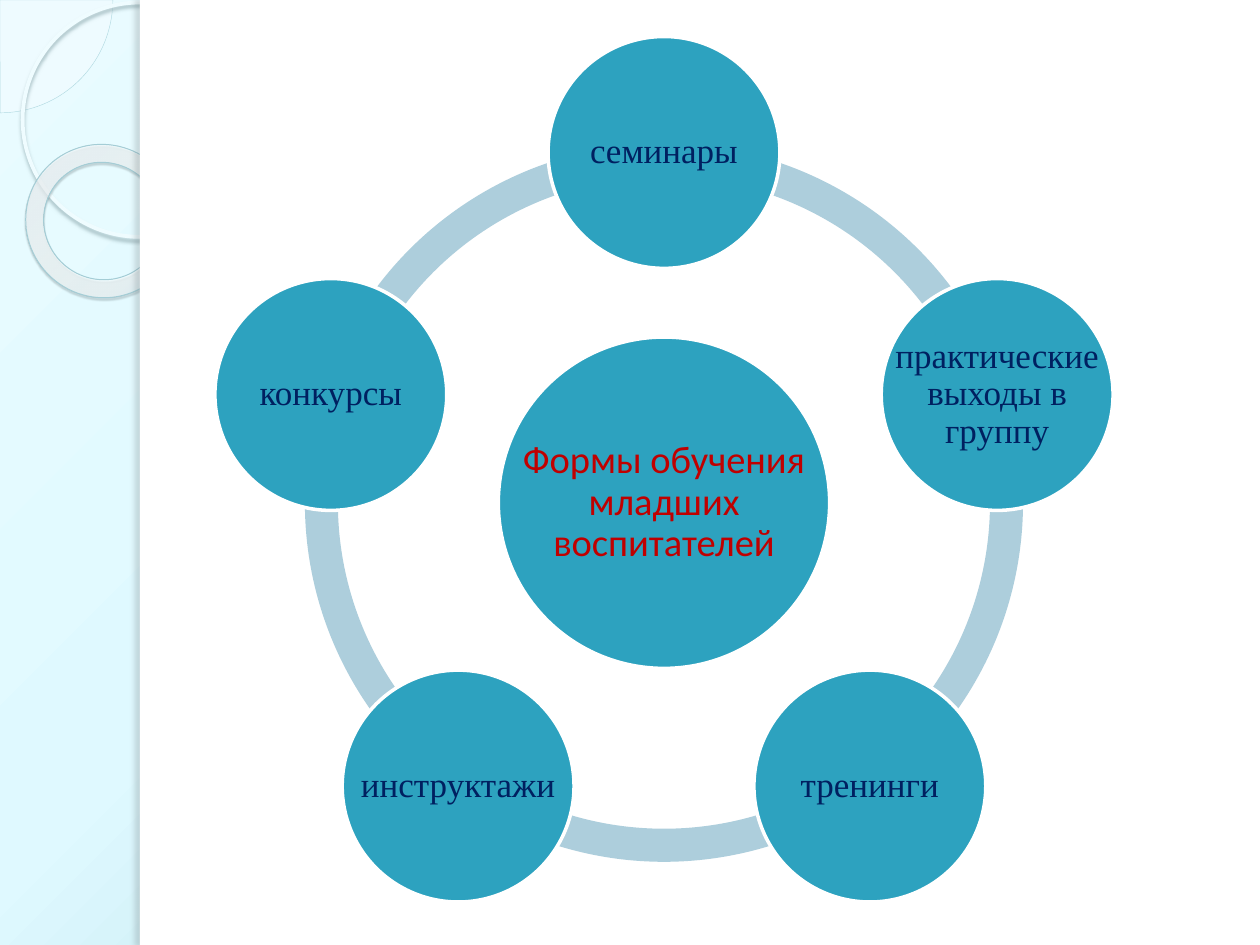
from math import cos, radians, sin

from lxml import etree
from pptx import Presentation
from pptx import util as u
from pptx.dml.color import RGBColor
from pptx.enum import shapes, text
from pptx.oxml import ns

HUES = {
    "white": "FFFFFF", "node": "2DA2BF", "arc": "ADCEDC",
    "title": "C00000", "label": "002060",
    "pie": "F9FEFF", "pie_line": "B2DAE2", "hoop": "EFFCFF",
    "ring_line": "A4CDD6", "hoop_dark": "9FB9BE",
    "ring_dark": "4C5D61", "edge_dark": "6E7A7D",
}
BACK = [(0, "E9FBFF", 100), (40, "DFF9FF", 100), (100, "96CBD6", 100)]
RING = [(0, "F9FEFF", 70), (70, "FDFFFF", 55), (100, "A3EEFE", 60)]
TITLE = {"size": u.Pt(22), "name": "Calibri"}
LABEL = {"size": u.Pt(20), "name": "Times New Roman"}
FRAME = {"word_wrap": True, "vertical_anchor": text.MSO_ANCHOR.MIDDLE,
         **{f"margin_{side}": u.Inches(0.03)
            for side in ("left", "top", "right", "bottom")}}
PARA = {"alignment": text.PP_ALIGN.CENTER, "line_spacing": 0.9}
WORDS = ["семинары", "практические выходы в группу", "тренинги",
         "инструктажи", "конкурсы"]
KIND = shapes.MSO_SHAPE


def rgb(name):
    return RGBColor.from_string(HUES[name])


def assign(item, values):
    for key, value in values.items():
        setattr(item, key, value)


def add(parent, tag, **attrs):
    return etree.SubElement(parent, ns.qn(tag), attrs)


def tint(parent, color, alpha):
    node = add(parent, "a:srgbClr", val=color)
    add(node, "a:alpha", val=str(alpha * 1000))


def radial(host, stops, left, top):
    """Turn the gradient in host into a circular one around (left, top) percent."""
    grad = host.find(".//" + ns.qn("a:gradFill"))
    for child in list(grad):
        grad.remove(child)
    items = add(grad, "a:gsLst")
    for pos, color, alpha in stops:
        tint(add(items, "a:gs", pos=str(pos * 1000)), color, alpha)
    way = add(grad, "a:path", path="circle")
    add(way, "a:fillToRect", l=str(left * 1000), t=str(top * 1000),
        r=str((100 - left) * 1000), b=str((100 - top) * 1000))


def shade(shape, color, alpha, blur, dist, angle):
    effects = shape._element.spPr.find(ns.qn("a:effectLst"))
    outer = add(effects, "a:outerShdw", blurRad=str(u.Pt(blur)),
                dist=str(u.Pt(dist)), dir=str(angle * 60000),
                algn="ctr", rotWithShape="0")
    tint(outer, HUES[color], alpha)


def draw(slide, kind, box, fill=None, line=None, width=1, adjust=()):
    shape = slide.shapes.add_shape(kind, *map(u.Inches, box))
    shape.shadow.inherit = False
    for i, value in enumerate(adjust):
        shape.adjustments[i] = value
    if fill:
        shape.fill.solid()
        shape.fill.fore_color.rgb = rgb(fill)
    else:
        shape.fill.background()
    if line:
        shape.line.color.rgb = rgb(line)
        shape.line.width = u.Pt(width)
    else:
        shape.line.fill.background()
    return shape


def square(x, y, size):
    return x - size / 2, y - size / 2, size, size


def side(slide, left, top, width, height):
    """Tinted strip with rings, beside the white panel."""
    slide.background.fill.gradient()
    radial(slide._element, BACK, -24, -20)

    # Quarter disc in the corner; angles are stored as degrees * 0.6
    pie = draw(slide, KIND.PIE, square(left, top, 1.79), "pie",
               "pie_line", 0.25, (0, 54))
    color = pie._element.spPr.find(ns.qn("a:solidFill"))[0]
    add(color, "a:alpha", val="33000")

    # Rings
    hoop = draw(slide, KIND.OVAL, (left + 0.18, top + 0.02, 1.86, 1.86),
                line="hoop", width=2.15)
    shade(hoop, "hoop_dark", 85, 2, 2, 90)
    ring = draw(slide, KIND.DONUT, (left + 0.2, top + 1.15, 1.23, 1.21),
                line="ring_line", width=0.58, adjust=(0.118,))
    ring.rotation = 38.6
    ring.fill.gradient()
    radial(ring._element.spPr, RING, -408, -50)
    shade(ring, "ring_dark", 35, 1, 1.2, 75)

    # White panel and its shaded edge
    start = left + 1.11
    draw(slide, KIND.RECTANGLE, (start, top, width - 1.11, height), "white")
    edge = draw(slide, KIND.RECTANGLE, (start, top, 0.08, height), "white")
    shade(edge, "edge_dark", 25, 3, 3, 180)


def bubble(slide, box, words, font, color):
    draw(slide, KIND.OVAL, box, "node", "white", 2)
    label = slide.shapes.add_textbox(*map(u.Inches, box))
    assign(label.text_frame, FRAME)
    para = label.text_frame.paragraphs[0]
    assign(para, PARA)
    run = para.add_run()
    run.text = words
    assign(run.font, font)
    run.font.color.rgb = rgb(color)


def cycle(slide, left, top, size):
    """Ring of bubbles around a central one."""
    x, y = left + size / 2, top + size / 2
    step = 360 / len(WORDS)
    turns = [(270 + i * step) % 360 for i in range(len(WORDS))]

    # Arcs between neighbours
    for turn in turns:
        draw(slide, KIND.BLOCK_ARC, (left, top, size, size), "arc",
             adjust=(turn * 0.6, (turn + step) % 360 * 0.6, 0.046))

    # Centre, then the bubbles
    bubble(slide, square(x, y, 2.63), "Формы обучения младших воспитателей",
           TITLE, "title")
    orbit = 2.78
    for turn, words in zip(turns, WORDS):
        angle = radians(turn)
        spot = square(x + orbit * cos(angle), y + orbit * sin(angle), 1.84)
        bubble(slide, spot, words, LABEL, "label")


def main():
    deck = Presentation()
    assign(deck, {"slide_width": u.Inches(10), "slide_height": u.Inches(7.5)})
    slide = deck.slides.add_slide(deck.slide_layouts[6])
    side(slide, 0, 0, 10, 7.5)
    cycle(slide, 2.42, 1.14, 5.7)
    deck.save("out.pptx")


if __name__ == "__main__":
    main()
